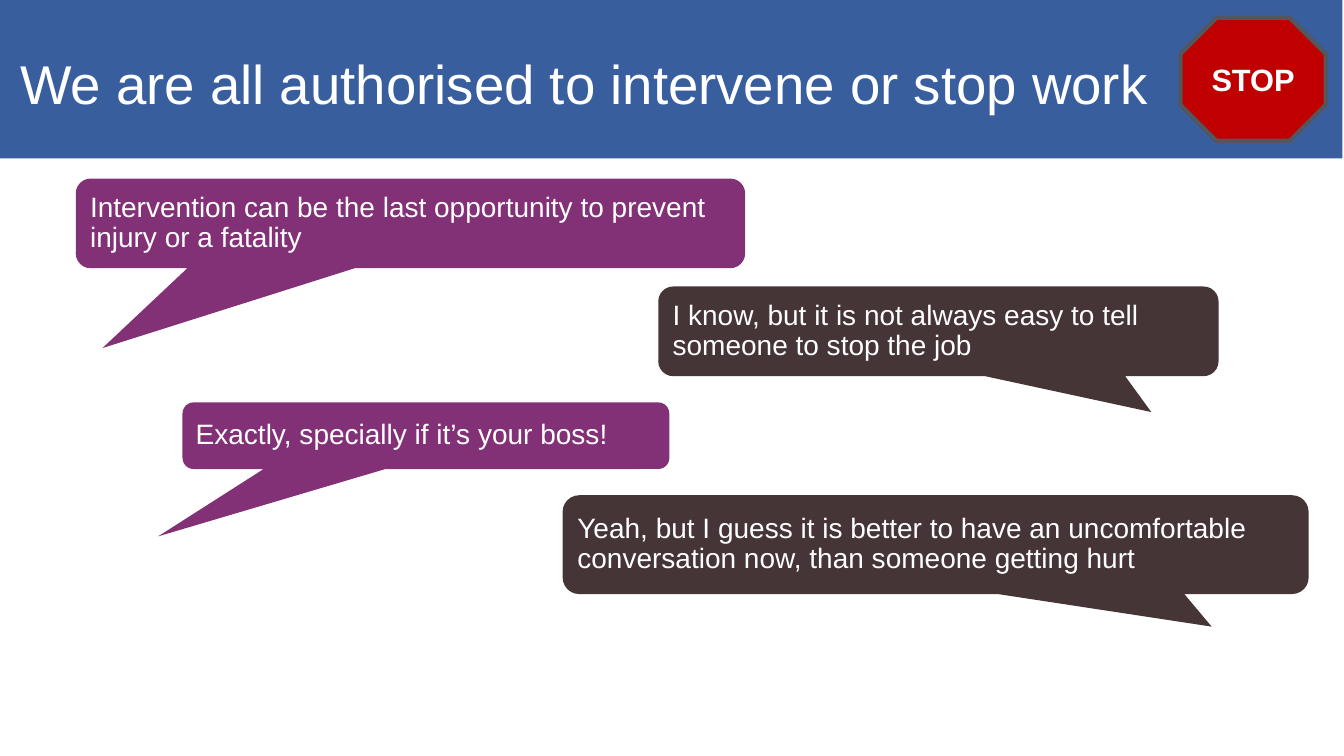
from pptx import Presentation
from pptx.dml.color import RGBColor
from pptx.enum.shapes import MSO_SHAPE as Kind
from pptx.enum.text import MSO_ANCHOR as Anchor, MSO_AUTO_SIZE as Fit, PP_ALIGN as Align
from pptx.util import Cm, Pt

BLUE, PLUM, BROWN = "385E9D", "833177", "453536"
RED, GREY, WHITE = "C00000", "53565A", "FFFFFF"


def paint(target, tone):
    target.solid()
    target.fore_color.rgb = RGBColor.from_string(tone)


class Deck:
    font = "Arial"

    def __init__(self, wide, high):
        self.prs = Presentation()
        self.prs.slide_width, self.prs.slide_height = Cm(wide), Cm(high)
        self.slide = self.prs.slides.add_slide(self.prs.slide_layouts[5])

    def label(self, shape, text, size, align=Align.LEFT, bold=False, lead=0.9):
        frame = shape.text_frame
        frame.word_wrap = True
        frame.auto_size = Fit.NONE
        frame.vertical_anchor = Anchor.MIDDLE
        para = frame.paragraphs[0]
        para.alignment = align
        para.line_spacing = lead
        para.space_before = Pt(0)
        run = para.add_run()
        run.text = text
        run.font.name, run.font.size, run.font.bold = self.font, Pt(size), bold
        paint(run.font.fill, WHITE)

    def shape(self, kind, box, tone):
        item = self.slide.shapes.add_shape(kind, *map(Cm, box))
        item.shadow.inherit = False
        paint(item.fill, tone)
        item.line.fill.background()
        return item

    def title(self, text, box, size):
        head = self.slide.shapes.title
        head.left, head.top, head.width, head.height = map(Cm, box)
        paint(head.fill, BLUE)
        self.label(head, text, size)
        frame = head.text_frame
        frame.margin_left = frame.margin_top = frame.margin_right = Cm(0.51)
        frame.margin_bottom = Cm(0.13)

    def speech(self, text, box, tone, tip):
        bubble = self.shape(Kind.ROUNDED_RECTANGULAR_CALLOUT, box, tone)
        bubble.adjustments[0], bubble.adjustments[1] = tip
        self.label(bubble, text, 20)

    def sign(self, text, box):
        stop = self.shape(Kind.OCTAGON, box, RED)
        paint(stop.line.fill, GREY)
        stop.line.width = Pt(3)
        self.label(stop, text, 22, Align.CENTER, True, 1.0)


def main():
    deck = Deck(33.87, 19.05)
    deck.title("We are all authorised to intervene or stop work",
               (0, 0, 33.83, 3.99), 39)
    talk = [
        ("Intervention can be the last opportunity to prevent injury or a fatality",
         (1.91, 4.5, 16.87, 2.26), PLUM, (-0.46, 1.39)),
        ("I know, but it is not always easy to tell someone to stop the job",
         (16.59, 7.22, 14.12, 2.26), BROWN, (0.38, 0.9)),
        ("Exactly, specially if it’s your boss!",
         (4.6, 10.14, 12.27, 1.68), PLUM, (-0.55, 1.51)),
        ("Yeah, but I guess it is better to have an uncomfortable conversation now, "
         "than someone getting hurt",
         (14.18, 12.48, 18.8, 2.49), BROWN, (0.37, 0.83)),
    ]
    for line in talk:
        deck.speech(*line)
    deck.sign("STOP", (29.75, 0.45, 3.66, 3.1))
    deck.prs.save("out.pptx")


if __name__ == "__main__":
    main()
